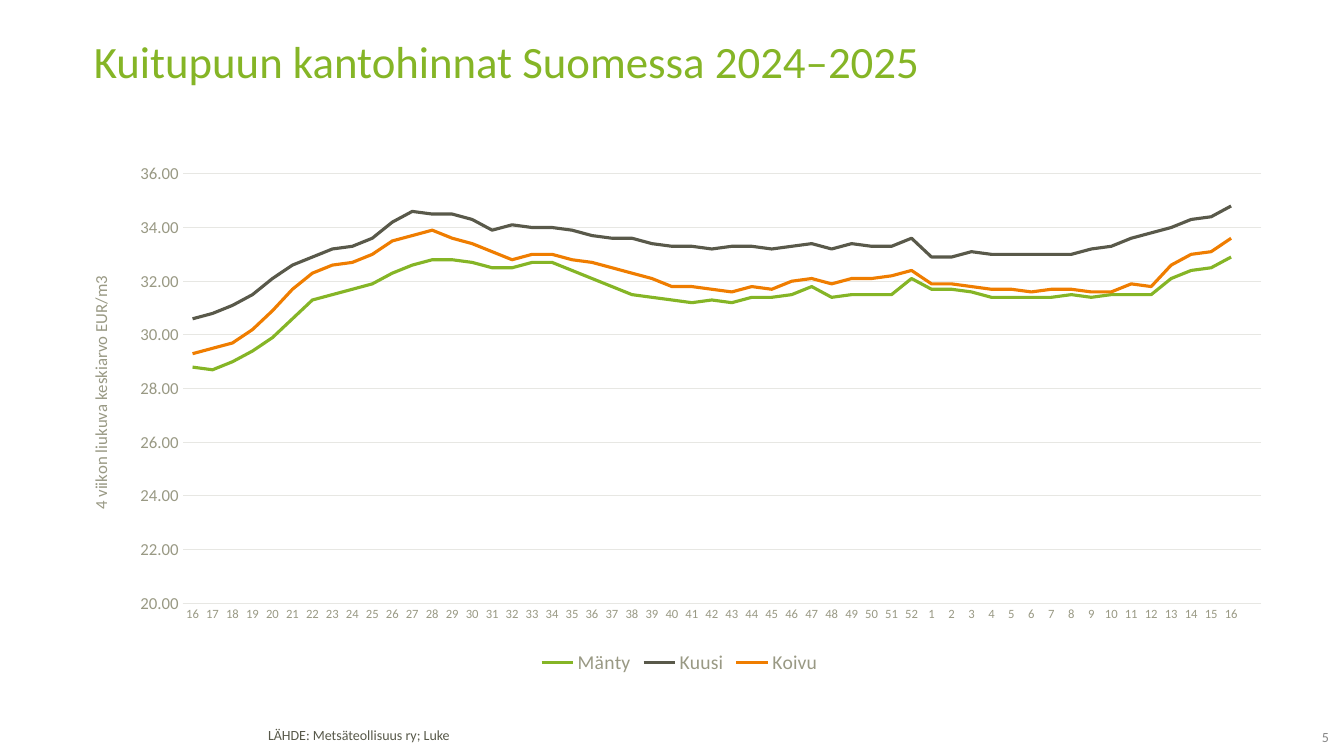
from lxml import etree
from pptx import Presentation
from pptx.chart.data import CategoryChartData
from pptx.dml.color import RGBColor
from pptx.enum.chart import XL_CHART_TYPE as ChartType
from pptx.enum.chart import XL_LEGEND_POSITION as LegendPosition
from pptx.enum.chart import XL_TICK_MARK as TickMark
from pptx.enum.text import MSO_ANCHOR as Anchor
from pptx.enum.text import PP_ALIGN as Align
from pptx.oxml import parse_xml
from pptx.oxml.ns import nsdecls, qn
from pptx.util import Inches, Pt

FONT = "Calibri"
COLORS = {
    "green": "85B526",
    "dark": "59594A",
    "orange": "EF7D00",
    "source": "58594A",
    "label": "999984",
    "grid": "E7E7E3",
    "number": "878787",
}
WEEKS = [str(week) for week in (*range(16, 53), *range(1, 17))] + [""]
PRICES = {
    "Mänty": ("green", [
        28.8, 28.7, 29, 29.4, 29.9, 30.6, 31.3, 31.5, 31.7, 31.9, 32.3, 32.6, 32.8, 32.8,
        32.7, 32.5, 32.5, 32.7, 32.7, 32.4, 32.1, 31.8, 31.5, 31.4, 31.3, 31.2, 31.3, 31.2,
        31.4, 31.4, 31.5, 31.8, 31.4, 31.5, 31.5, 31.5, 32.1, 31.7, 31.7, 31.6, 31.4, 31.4,
        31.4, 31.4, 31.5, 31.4, 31.5, 31.5, 31.5, 32.1, 32.4, 32.5, 32.9, None]),
    "Kuusi": ("dark", [
        30.6, 30.8, 31.1, 31.5, 32.1, 32.6, 32.9, 33.2, 33.3, 33.6, 34.2, 34.6, 34.5, 34.5,
        34.3, 33.9, 34.1, 34, 34, 33.9, 33.7, 33.6, 33.6, 33.4, 33.3, 33.3, 33.2, 33.3,
        33.3, 33.2, 33.3, 33.4, 33.2, 33.4, 33.3, 33.3, 33.6, 32.9, 32.9, 33.1, 33, 33,
        33, 33, 33, 33.2, 33.3, 33.6, 33.8, 34, 34.3, 34.4, 34.8, None]),
    "Koivu": ("orange", [
        29.3, 29.5, 29.7, 30.2, 30.9, 31.7, 32.3, 32.6, 32.7, 33, 33.5, 33.7, 33.9, 33.6,
        33.4, 33.1, 32.8, 33, 33, 32.8, 32.7, 32.5, 32.3, 32.1, 31.8, 31.8, 31.7, 31.6,
        31.8, 31.7, 32, 32.1, 31.9, 32.1, 32.1, 32.2, 32.4, 31.9, 31.9, 31.8, 31.7, 31.7,
        31.6, 31.7, 31.7, 31.6, 31.6, 31.9, 31.8, 32.6, 33, 33.1, 33.6, None]),
}


def rgb(color):
    return RGBColor.from_string(COLORS[color])


def format_font(font, size, color):
    font.name = FONT
    font.size = Pt(size)
    font.bold = False
    font.color.rgb = rgb(color)


def format_line(line, color, width):
    line.color.rgb = rgb(color)
    line.width = Pt(width)


def place(shape, left, top, width, height):
    shape.left, shape.top = Inches(left), Inches(top)
    shape.width, shape.height = Inches(width), Inches(height)


def write_text(frame, text, size, color, align=Align.LEFT, spacing=1.0,
               anchor=Anchor.TOP, margins=(0.1, 0.05, 0.1, 0.05)):
    frame.word_wrap = True
    frame.vertical_anchor = anchor
    (frame.margin_left, frame.margin_top,
     frame.margin_right, frame.margin_bottom) = map(Inches, margins)
    paragraph = frame.paragraphs[0]
    paragraph.alignment = align
    paragraph.line_spacing = spacing
    run = paragraph.add_run()
    run.text = text
    format_font(run.font, size, color)


def add_text(slide, box, text, **text_format):
    shape = slide.shapes.add_textbox(*map(Inches, box))
    write_text(shape.text_frame, text, **text_format)


def set_plot_layout(chart, left, top, width, height):
    """Fix the inner plot area, as fractions of the chart."""
    plot_area = chart._chartSpace.chart.plotArea
    for layout in plot_area.findall(qn("c:layout")):
        plot_area.remove(layout)
    values = {"x": left, "y": top, "w": width, "h": height}
    sizes = "".join(f'<c:{name} val="{value}"/>' for name, value in values.items())
    plot_area.insert(0, parse_xml(
        f'<c:layout {nsdecls("c")}><c:manualLayout><c:layoutTarget val="inner"/>'
        f'<c:xMode val="edge"/><c:yMode val="edge"/>{sizes}'
        "</c:manualLayout></c:layout>"))


def format_week_axis(axis):
    axis.major_tick_mark = axis.minor_tick_mark = TickMark.NONE
    axis.has_major_gridlines = False
    format_font(axis.tick_labels.font, 9, "label")
    format_line(axis.format.line, "grid", 0.75)
    label_skip = etree.Element(qn("c:tickLblSkip"), val="1")
    axis._element.find(qn("c:noMultiLvlLbl")).addprevious(label_skip)


def format_price_axis(axis):
    axis.minimum_scale, axis.maximum_scale, axis.major_unit = 20, 36, 2
    axis.major_tick_mark = axis.minor_tick_mark = TickMark.NONE
    axis.has_major_gridlines = True
    format_line(axis.major_gridlines.format.line, "grid", 0.75)
    axis.format.line.fill.background()
    axis.tick_labels.number_format = "#,##0.00"
    axis.tick_labels.number_format_is_linked = False
    format_font(axis.tick_labels.font, 12, "label")
    run = axis.axis_title.text_frame.paragraphs[0].add_run()
    run.text = "4 viikon liukuva keskiarvo EUR/m3"
    format_font(run.font, 12, "label")


def add_price_chart(slide, box):
    data = CategoryChartData(number_format="#,##0.00")
    data.categories = WEEKS
    for name, (_, values) in PRICES.items():
        data.add_series(name, values)
    chart = slide.shapes.add_chart(ChartType.LINE, *map(Inches, box), data).chart
    format_font(chart.font, 10, "dark")
    chart.has_title = False
    chart.plots[0].vary_by_categories = False
    for series, (color, _) in zip(chart.plots[0].series, PRICES.values()):
        series.smooth = False
        format_line(series.format.line, color, 2.25)
    format_week_axis(chart.category_axis)
    format_price_axis(chart.value_axis)
    chart.has_legend = True
    chart.legend.position = LegendPosition.BOTTOM
    chart.legend.include_in_layout = False
    format_font(chart.legend.font, 14, "label")
    set_plot_layout(chart, 0.083, 0.03, 0.905, 0.826)


def main():
    presentation = Presentation()
    presentation.slide_width = Inches(13.33)
    presentation.slide_height = Inches(7.5)
    slide = presentation.slides.add_slide(presentation.slide_layouts[5])
    add_text(slide, (2.56, 7.18, 7.18, 0.27), "LÄHDE: Metsäteollisuus ry; Luke",
             size=10, color="source", spacing=0.85)
    add_text(slide, (12.65, 7.24, 0.53, 0.19), "5", size=10, color="number",
             align=Align.RIGHT, anchor=Anchor.MIDDLE, margins=(0, 0, 0, 0.04))
    title = slide.shapes.title
    place(title, 0.83, 0.39, 11.69, 0.98)
    write_text(title.text_frame, "Kuitupuun kantohinnat Suomessa 2024–2025",
               size=32, color="green", spacing=0.8)
    add_price_chart(slide, (0.83, 1.57, 11.82, 5.16))
    presentation.save("out.pptx")


if __name__ == "__main__":
    main()
